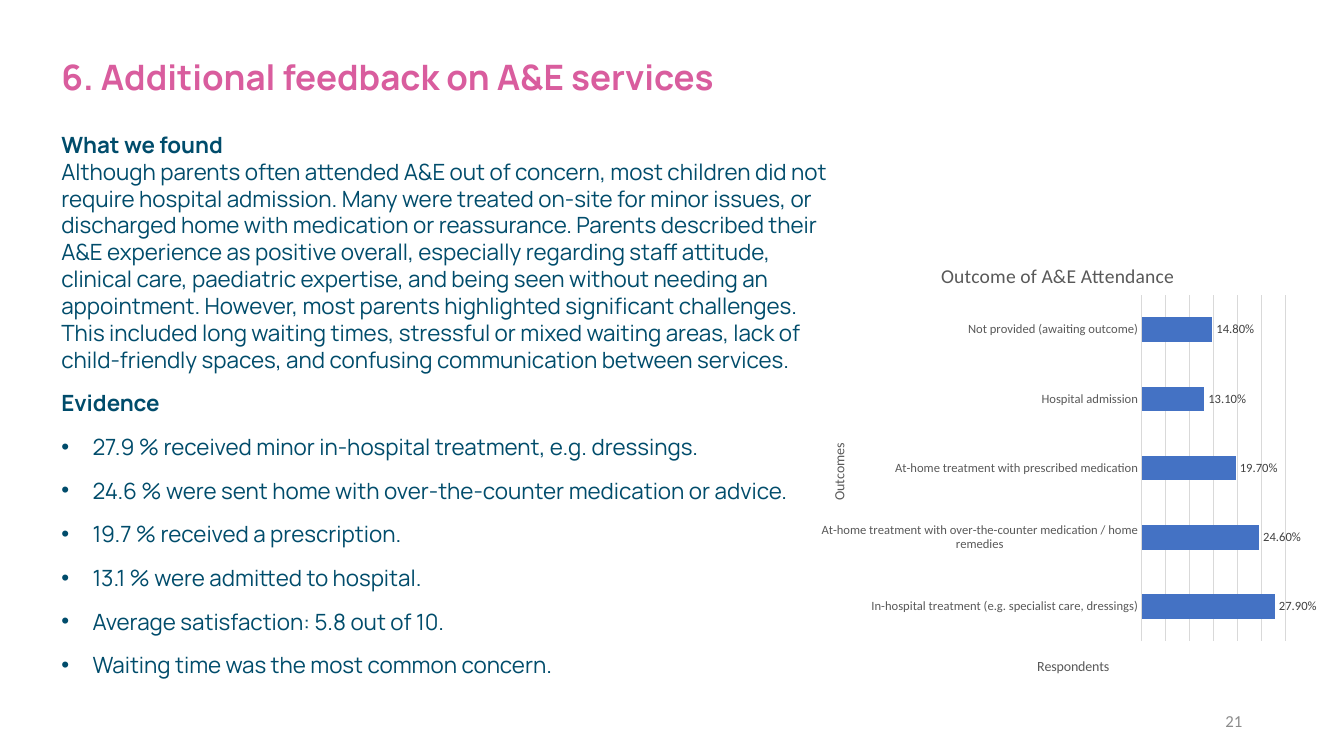
from lxml import etree
from pptx import Presentation
from pptx.chart.data import CategoryChartData
from pptx.dml.color import RGBColor
from pptx.enum import chart as chart_enum, text
from pptx.oxml import parse_xml
from pptx.oxml.ns import nsdecls, qn
from pptx.util import Inches, Pt

COLORS = {
    "title": "D95D9E",
    "body": "004C6B",
    "number": "8C8C8C",
    "bar": "4472C4",
    "grid": "D9D9D9",
    "axis": "595959",
    "label": "404040",
}

FINDINGS = (
    "Although parents often attended A&E out of concern, most children did not "
    "require hospital admission. Many were treated on-site for minor issues, or "
    "discharged home with medication or reassurance. Parents described their A&E "
    "experience as positive overall, especially regarding staff attitude, clinical "
    "care, paediatric expertise, and being seen without needing an appointment. "
    "However, most parents highlighted significant challenges. This included long "
    "waiting times, stressful or mixed waiting areas, lack of child-friendly "
    "spaces, and confusing communication between services."
)

EVIDENCE = [
    "27.9 % received minor in-hospital treatment, e.g. dressings.",
    "24.6 % were sent home with over-the-counter medication or advice.",
    "19.7 % received a prescription.",
    "13.1 % were admitted to hospital.",
    "Average satisfaction: 5.8 out of 10.",
    "Waiting time was the most common concern.",
]

OUTCOMES = {
    "In-hospital treatment (e.g. specialist care, dressings)": 0.279,
    "At-home treatment with over-the-counter medication / home remedies": 0.246,
    "At-home treatment with prescribed medication": 0.197,
    "Hospital admission": 0.131,
    "Not provided (awaiting outcome)": 0.148,
}


def style_font(font, size, color, name="Calibri", bold=False):
    font.size = Pt(size)
    font.name = name
    font.bold = bold
    font.color.rgb = RGBColor.from_string(COLORS[color])


def style_title(title):
    title.left, title.top = Inches(0.51), Inches(0.4)
    title.width, title.height = Inches(11.91), Inches(0.77)
    frame = title.text_frame
    frame.text = "6. Additional feedback on A&E services"
    frame.auto_size = text.MSO_AUTO_SIZE.NONE
    frame.vertical_anchor = text.MSO_ANCHOR.MIDDLE
    paragraph = frame.paragraphs[0]
    paragraph.alignment = text.PP_ALIGN.LEFT
    paragraph.line_spacing = 0.9
    style_font(paragraph.runs[0].font, 25, "title", "Manrope", True)


def add_text_frame(slide, left, top, width, height):
    box = slide.shapes.add_textbox(
        Inches(left), Inches(top), Inches(width), Inches(height))
    box.text_frame.word_wrap = True
    return box.text_frame


def add_bullet(paragraph):
    properties = paragraph._p.get_or_add_pPr()
    properties.set("marL", str(Inches(0.31)))
    properties.set("indent", str(-Inches(0.31)))
    etree.SubElement(properties, qn("a:buFont")).set("typeface", "Arial")
    etree.SubElement(properties, qn("a:buChar")).set("char", "•")


def add_body(slide):
    frame = add_text_frame(slide, 0.51, 1.25, 7.86, 6.13)
    frame.text = "\n".join(["What we found\v" + FINDINGS, "Evidence", *EVIDENCE])
    for index, paragraph in enumerate(frame.paragraphs):
        paragraph.space_after = Pt(12)
        if index > 1:
            add_bullet(paragraph)
        for position, run in enumerate(paragraph.runs):
            is_heading = index < 2 and position == 0
            style_font(run.font, 16, "body", "Manrope", is_heading)
        for line_break in paragraph._p.findall(qn("a:br")):
            etree.SubElement(line_break, qn("a:rPr")).set("sz", "1600")


def add_slide_number(slide):
    frame = add_text_frame(slide, 9.42, 6.95, 3, 0.4)
    frame.text = "21"
    frame.vertical_anchor = text.MSO_ANCHOR.MIDDLE
    paragraph = frame.paragraphs[0]
    paragraph.alignment = text.PP_ALIGN.RIGHT
    style_font(paragraph.runs[0].font, 12, "number")


def set_layout(parent, after, **fractions):
    """Place a chart part by fractions of the chart, after the given child."""
    modes = {f"{key}Mode": "edge" for key in "xy"}
    target = {"layoutTarget": "inner"} if "w" in fractions else {}
    settings = {**target, **modes, **fractions}
    children = "".join(
        f'<c:{key} val="{value}"/>' for key, value in settings.items())
    layout = parse_xml(
        f'<c:layout {nsdecls("c")}><c:manualLayout>{children}'
        "</c:manualLayout></c:layout>")
    for old in parent.findall(qn("c:layout")):
        parent.remove(old)
    position = 0 if after is None else parent.index(parent.find(qn(after))) + 1
    parent.insert(position, layout)


def set_chart_title(owner, wording, size, x, y):
    """Title a chart or an axis at the given fractions of the chart."""
    title = owner.chart_title if hasattr(owner, "chart_title") else owner.axis_title
    title.text_frame.text = wording
    style_font(title.text_frame.paragraphs[0].runs[0].font, size, "axis")
    set_layout(title._element, "c:tx", x=x, y=y)
    return title


def style_line(line, color):
    line.color.rgb = RGBColor.from_string(COLORS[color])
    line.width = Pt(0.75)


def style_axes(chart):
    category_axis = chart.category_axis
    category_axis.major_tick_mark = chart_enum.XL_TICK_MARK.NONE
    style_font(category_axis.tick_labels.font, 9, "axis")
    style_line(category_axis.format.line, "grid")
    title = set_chart_title(category_axis, "Outcomes", 10, 0.045, 0.45)
    body = title.text_frame._txBody.find(qn("a:bodyPr"))
    body.set("rot", "-5400000")
    body.set("vert", "horz")

    value_axis = chart.value_axis
    value_axis.minimum_scale, value_axis.maximum_scale = 0, 0.3
    value_axis.major_unit = 0.05
    value_axis.has_major_gridlines = True
    style_line(value_axis.major_gridlines.format.line, "grid")
    set_chart_title(value_axis, "Respondents", 10, 0.45, 0.92)
    value_axis.visible = False


def add_outcome_chart(slide):
    data = CategoryChartData(number_format="0.00%")
    data.categories = list(OUTCOMES)
    data.add_series("Series 1", list(OUTCOMES.values()))
    chart = slide.shapes.add_chart(
        chart_enum.XL_CHART_TYPE.BAR_CLUSTERED, Inches(7.98), Inches(2.34),
        Inches(5.08), Inches(4.52), data).chart
    style_font(chart.font, 10, "axis")
    chart.has_legend = False
    set_chart_title(chart, "Outcome of A&E Attendance", 14, 0.26, 0.05)
    style_axes(chart)

    plot = chart.plots[0]
    plot.gap_width = 182
    plot.vary_by_categories = False
    fill = plot.series[0].format.fill
    fill.solid()
    fill.fore_color.rgb = RGBColor.from_string(COLORS["bar"])
    plot.has_data_labels = True
    labels = plot.data_labels
    labels.show_value = True
    labels.position = chart_enum.XL_LABEL_POSITION.OUTSIDE_END
    labels.number_format = "0.00%"
    labels.number_format_is_linked = False
    style_font(labels.font, 9, "label")
    plot_area = chart._chartSpace.chart.plotArea
    set_layout(plot_area, None, x=0.66, y=0.13, w=0.28, h=0.76)


def main():
    presentation = Presentation()
    presentation.slide_width = Inches(13.33)
    presentation.slide_height = Inches(7.5)
    slide = presentation.slides.add_slide(presentation.slide_layouts[5])
    style_title(slide.shapes.title)
    add_slide_number(slide)
    add_body(slide)
    add_outcome_chart(slide)
    presentation.save("out.pptx")


if __name__ == "__main__":
    main()
